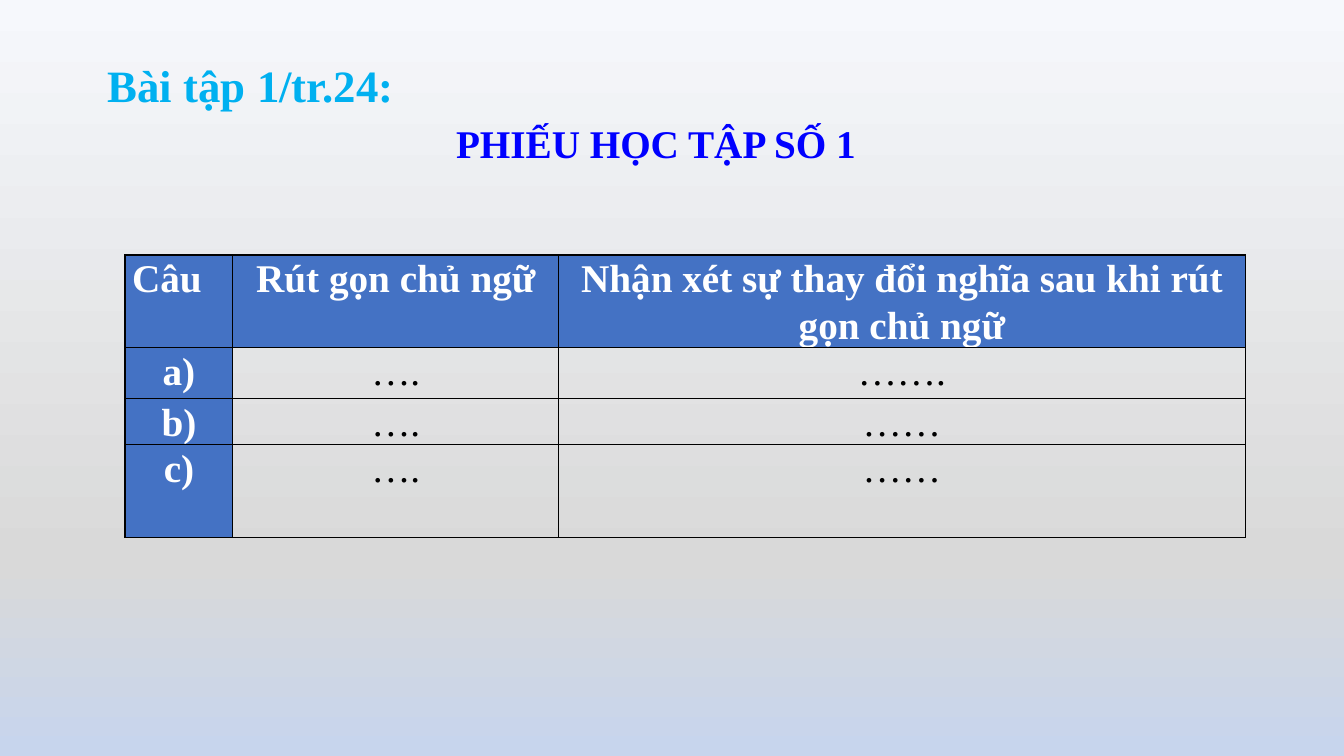
from copy import deepcopy

from pptx import Presentation
from pptx.dml.color import RGBColor
from pptx.enum.text import MSO_ANCHOR as Anchor, MSO_AUTO_SIZE as AutoSize, PP_ALIGN as Align
from pptx.oxml.ns import qn
from pptx.oxml.xmlchemy import OxmlElement as new_element
from pptx.util import Inches, Pt

COLORS = {"sky": "00B0F0", "blue": "0000FF", "header": "4472C4", "white": "FFFFFF", "black": "000000"}
BACKDROP = [(0, "F6F8FC"), (0.74, "D9D9D9"), (1, "C7D5ED")]
FONT = "Times New Roman"
COLUMN_WIDTHS = [1.07, 3.23, 6.81]
ROW_HEIGHTS = [0.92, 0.5, 0.43, 0.92]
WORKSHEET = [
    ["Câu", "Rút gọn chủ ngữ", "Nhận xét sự thay đổi nghĩa sau khi rút gọn chủ ngữ"],
    ["a)", "….", "……."],
    ["b)", "….", "……"],
    ["c)", "….", "……"],
]


def apply(target, values):
    """Set every named attribute on the target."""
    for name, value in values.items():
        setattr(target, name, value)


def write(frame, text, color, size=28, bold=True, **layout):
    """Put one styled paragraph into a text frame."""
    para = frame.paragraphs[0]
    apply(para, layout)
    span = para.add_run()
    span.text = text
    apply(span.font, {"name": FONT, "size": Pt(size), "bold": bold})
    span.font.color.rgb = RGBColor.from_string(COLORS[color])


def paint_background(page):
    """Fill the page with a vertical three-stop gradient."""
    fill = page.background.fill
    fill.gradient()
    fill.gradient_angle = 270
    stop_list = page.element.find(".//" + qn("a:gsLst"))
    stop_list.append(deepcopy(stop_list[-1]))
    for stop, (position, color) in zip(fill.gradient_stops, BACKDROP):
        stop.color.rgb = RGBColor.from_string(color)
        stop.position = position


def add_heading(page, box, text, color, frame_values, **style):
    """Place a heading in the given box."""
    frame = page.shapes.add_textbox(*map(Inches, box)).text_frame
    apply(frame, frame_values)
    write(frame, text, color, **style)


def add_borders(cell):
    """Draw a thin black line on all four sides of a cell."""
    for side in ("a:lnL", "a:lnR", "a:lnT", "a:lnB"):
        line = new_element(side)
        line.set("w", str(Pt(1)))
        solid = new_element("a:solidFill")
        color = new_element("a:srgbClr")
        color.set("val", COLORS["black"])
        solid.append(color)
        line.append(solid)
        cell._tc.get_or_add_tcPr().append(line)


def add_worksheet(page, left, top):
    """Place the exercise table with its top left corner at the given point."""
    size = (sum(COLUMN_WIDTHS), sum(ROW_HEIGHTS))
    table = page.shapes.add_table(
        len(ROW_HEIGHTS), len(COLUMN_WIDTHS), *map(Inches, (left, top, *size))
    ).table
    for column, width in zip(table.columns, COLUMN_WIDTHS):
        column.width = Inches(width)
    for row, height in zip(table.rows, ROW_HEIGHTS):
        row.height = Inches(height)
    margins = {"margin_left": Inches(0.07), "margin_right": Inches(0.07), "margin_top": 0, "margin_bottom": 0}
    for r, texts in enumerate(WORKSHEET):
        for c, text in enumerate(texts):
            cell = table.cell(r, c)
            apply(cell, margins)
            add_borders(cell)
            is_label = r == 0 or c == 0
            if is_label:
                cell.fill.solid()
                cell.fill.fore_color.rgb = RGBColor.from_string(COLORS["header"])
            else:
                cell.fill.background()
            write(
                cell.text_frame, text, "white" if is_label else "black", bold=is_label,
                alignment=Align.LEFT if r == c == 0 else Align.CENTER, line_spacing=1.07,
            )


def main():
    """Build and save the worksheet slide."""
    deck = Presentation()
    apply(deck, {"slide_width": Inches(13.33), "slide_height": Inches(7.5)})
    page = deck.slides.add_slide(deck.slide_layouts[6])
    paint_background(page)
    add_worksheet(page, 1.24, 2.53)
    grow = {"auto_size": AutoSize.SHAPE_TO_FIT_TEXT}
    add_heading(
        page, (4.4, 1.13, 4.21, 0.57), "PHIẾU HỌC TẬP SỐ 1", "blue",
        {**grow, "word_wrap": False, "vertical_anchor": Anchor.MIDDLE}, alignment=Align.CENTER,
    )
    add_heading(
        page, (0.97, 0.26, 3.11, 0.81), "Bài tập 1/tr.24:", "sky",
        {**grow, "word_wrap": True}, size=32, alignment=Align.JUSTIFY, line_spacing=1.5,
    )
    deck.save("out.pptx")


if __name__ == "__main__":
    main()
